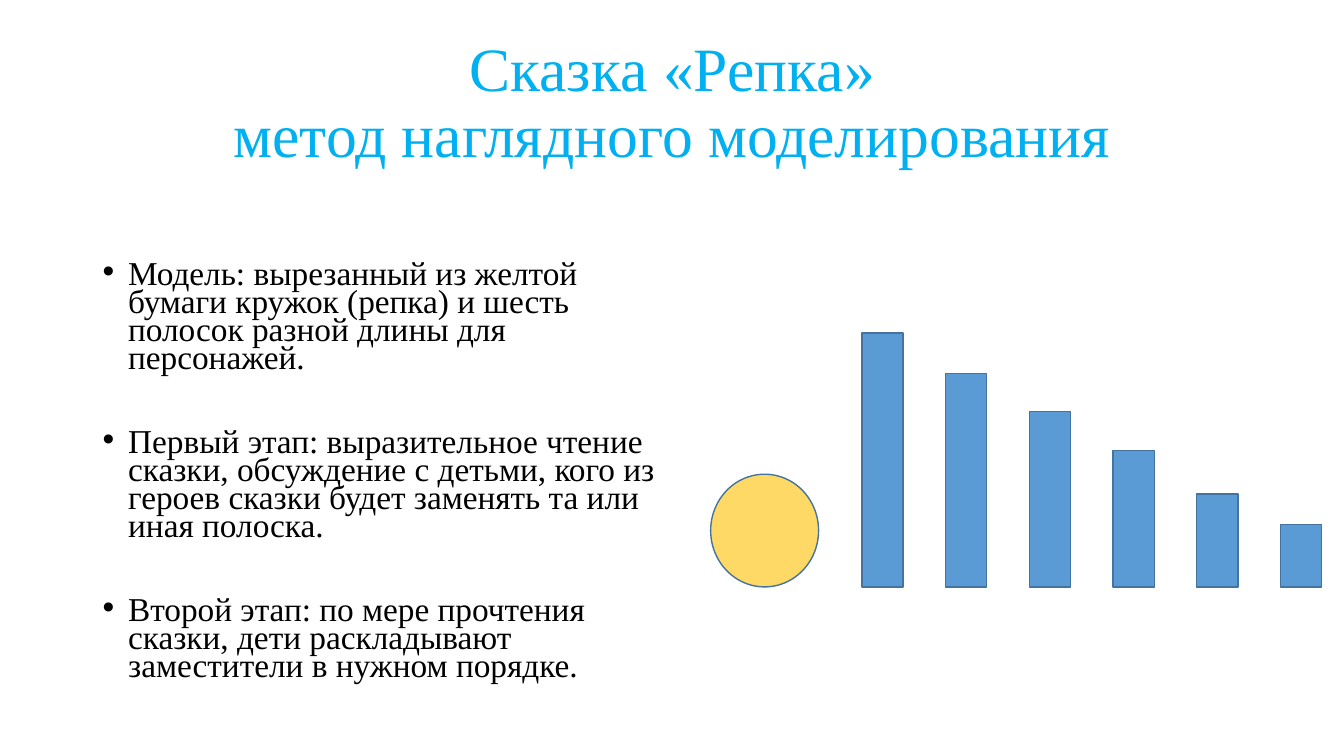
from lxml.etree import SubElement
from pptx import Presentation
from pptx.dml.color import RGBColor
from pptx.enum.shapes import MSO_SHAPE
from pptx.enum.text import MSO_ANCHOR, MSO_AUTO_SIZE, PP_ALIGN
from pptx.oxml.ns import qn
from pptx.util import Cm, Pt

SKY = RGBColor(0x00, 0xB0, 0xF0)
BLACK = RGBColor(0x00, 0x00, 0x00)
TURNIP_YELLOW = RGBColor(0xFF, 0xD9, 0x66)
STRIP_BLUE = RGBColor(0x5B, 0x9B, 0xD5)
OUTLINE = RGBColor(0x43, 0x73, 0x9E)

HEADING = "Сказка «Репка»\vметод наглядного моделирования"
STAGES = [
    "Модель: вырезанный из желтой бумаги кружок (репка) и шесть полосок "
    "разной длины для персонажей.",
    "Первый этап: выразительное чтение сказки, обсуждение с детьми, кого "
    "из героев сказки будет заменять та или иная полоска.",
    "Второй этап: по мере прочтения сказки, дети раскладывают заместители "
    "в нужном порядке.",
]

GROUND = 14.79
STRIP_LEFT, STRIP_STEP, STRIP_WIDTH = 21.72, 2.11, 1.04
STRIP_HEIGHTS = [6.4, 5.38, 4.42, 3.43, 2.34, 1.57]


def apply(target, formats):
    for name, value in formats.items():
        setattr(target, name, value)


def style_runs(paragraph, size, color):
    for run in paragraph.runs:
        apply(run.font, {"name": "Times New Roman", "size": Pt(size)})
        run.font.color.rgb = color


def add_bullet(paragraph):
    properties = paragraph._p.get_or_add_pPr()
    properties.set("marL", str(Cm(0.64)))
    properties.set("indent", str(Cm(-0.64)))
    SubElement(properties, qn("a:buFont")).set("typeface", "Arial")
    SubElement(properties, qn("a:buChar")).set("char", "•")


def set_heading(slide):
    heading = slide.shapes.title
    apply(heading, {"left": Cm(2.34), "top": Cm(0.58),
                    "width": Cm(29.21), "height": Cm(4.11)})
    frame = heading.text_frame
    apply(frame, {"text": HEADING, "vertical_anchor": MSO_ANCHOR.MIDDLE,
                  "auto_size": MSO_AUTO_SIZE.NONE})
    line = frame.paragraphs[0]
    apply(line, {"alignment": PP_ALIGN.CENTER, "line_spacing": 0.9})
    style_runs(line, 44, SKY)


def add_stages(slide):
    box = slide.shapes.add_textbox(Cm(2.34), Cm(5.08), Cm(14.4), Cm(12.09))
    frame = box.text_frame
    apply(frame, {"word_wrap": True, "margin_top": Cm(1.54),
                  "text": "\n".join(STAGES)})
    for index, paragraph in enumerate(frame.paragraphs):
        add_bullet(paragraph)
        paragraph.line_spacing = 0.7
        if index:
            paragraph.space_before = Pt(40)
        style_runs(paragraph, 23.8, BLACK)


def add_figure(slide, kind, left, width, height, color):
    figure = slide.shapes.add_shape(
        kind, Cm(left), Cm(GROUND - height), Cm(width), Cm(height))
    figure.shadow.inherit = False
    figure.fill.solid()
    figure.fill.fore_color.rgb = color
    figure.line.color.rgb = OUTLINE
    figure.line.width = Pt(1)


def main():
    presentation = Presentation()
    apply(presentation, {"slide_width": Cm(33.87), "slide_height": Cm(19.05)})
    slide = presentation.slides.add_slide(presentation.slide_layouts[5])
    set_heading(slide)
    add_stages(slide)
    add_figure(slide, MSO_SHAPE.OVAL, 17.91, 2.72, 2.84, TURNIP_YELLOW)
    for index, height in enumerate(STRIP_HEIGHTS):
        add_figure(slide, MSO_SHAPE.RECTANGLE, STRIP_LEFT + index * STRIP_STEP,
                   STRIP_WIDTH, height, STRIP_BLUE)
    presentation.save("out.pptx")


if __name__ == "__main__":
    main()
